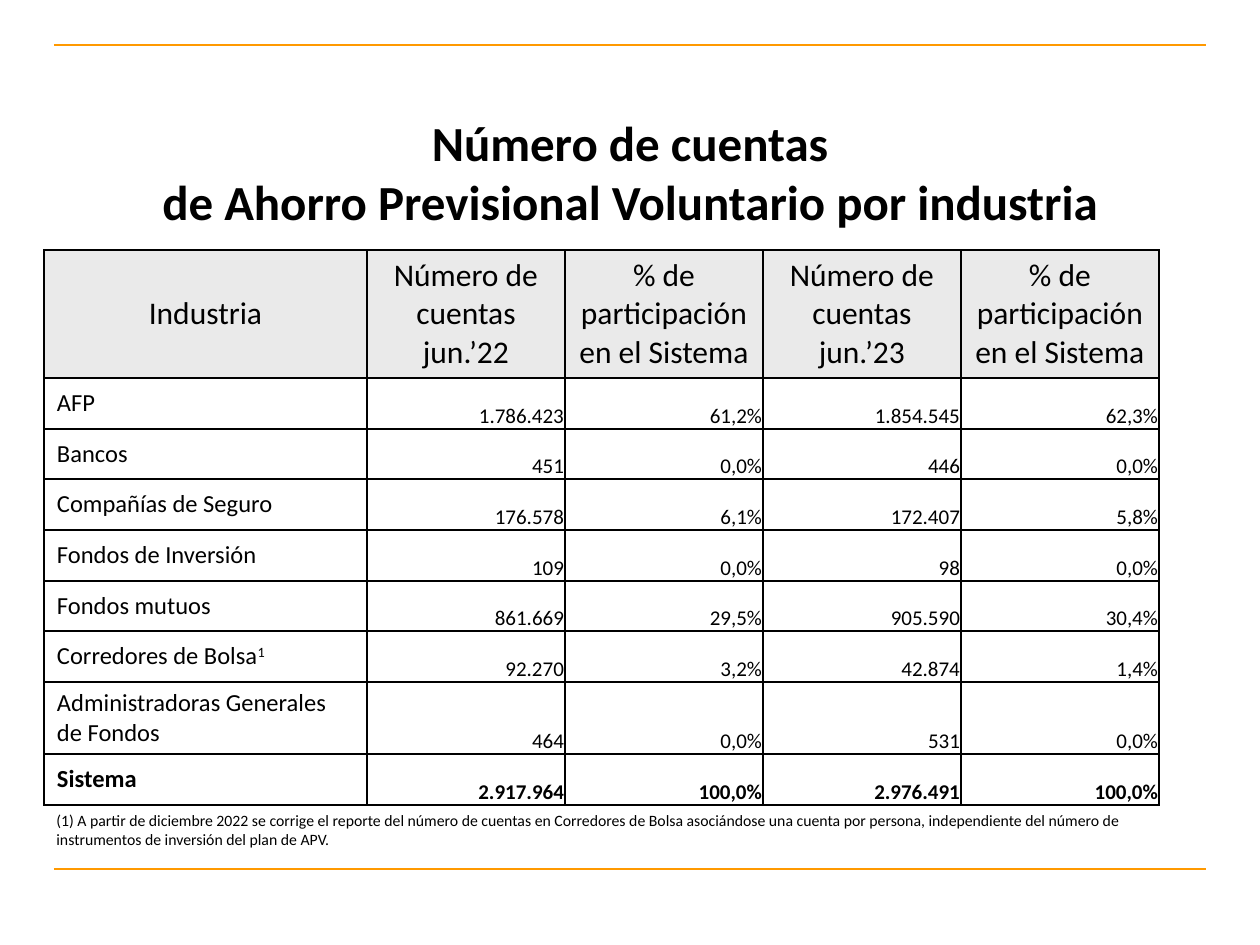
"""Builds the slide on voluntary pension savings accounts by industry."""
from lxml import etree
from pptx import Presentation
from pptx.dml.color import RGBColor
from pptx.enum.shapes import MSO_CONNECTOR
from pptx.enum.text import MSO_ANCHOR, MSO_AUTO_SIZE, PP_ALIGN
from pptx.oxml.ns import qn
from pptx.util import Pt

LEFT, MID, RIGHT = PP_ALIGN.LEFT, PP_ALIGN.CENTER, PP_ALIGN.RIGHT
CENTER, BOTTOM = MSO_ANCHOR.MIDDLE, MSO_ANCHOR.BOTTOM
LINE = MSO_CONNECTOR.STRAIGHT
FIXED, GROW = MSO_AUTO_SIZE.NONE, MSO_AUTO_SIZE.SHAPE_TO_FIT_TEXT

HUES = {"text": "000000", "head": "EAEAEA", "cell": "FFFFFF", "rule": "FF9900"}
TITLE = "Número de cuentas\vde Ahorro Previsional Voluntario por industria"
SHARE = "% de participación en el Sistema"
HEAD = ["Industria", "Número de cuentas\njun.’22", SHARE,
        "Número de cuentas\njun.’23", SHARE]
ROWS = [
    ("AFP", "1.786.423", "61,2%", "1.854.545", "62,3%"),
    ("Bancos", "451", "0,0%", "446", "0,0%"),
    ("Compañías de Seguro", "176.578", "6,1%", "172.407", "5,8%"),
    ("Fondos de Inversión", "109", "0,0%", "98", "0,0%"),
    ("Fondos mutuos", "861.669", "29,5%", "905.590", "30,4%"),
    ("Corredores de Bolsa^1", "92.270", "3,2%", "42.874", "1,4%"),
    ("Administradoras Generales de Fondos", "464", "0,0%", "531", "0,0%"),
    ("Sistema", "2.917.964", "100,0%", "2.976.491", "100,0%"),
]
NOTE = ("(1) A partir de diciembre 2022 se corrige el reporte del número de "
        "cuentas en Corredores de Bolsa asociándose una cuenta por persona, "
        "independiente del número de instrumentos de inversión del plan de APV.")

COLS = [323] + [198] * 4
EDGES = [250, 378, 429, 479, 530, 581, 631, 682, 754, 805]
X, WIDE = 44, sum(COLS)


def px(num):
    return round(num * 914400 / 126)


def box(*nums):
    return [px(num) for num in nums]


def write(frame, text, size=18, bold=False, align=LEFT):
    for at, part in enumerate(text.split("\n")):
        para = frame.add_paragraph() if at else frame.paragraphs[0]
        para.alignment = align
        base, _, sup = part.partition("^")
        para.text = base
        if sup:
            run = para.add_run()
            run.text = sup
            run.font._element.set("baseline", "30000")
        for run in para.runs:
            font = run.font
            font.name, font.size, font.bold = "Calibri", Pt(size), bold
            font.color.rgb = RGBColor.from_string(HUES["text"])


def rule(slide, y):
    line = slide.shapes.add_connector(LINE, *box(54, y, 1206, y))
    line.line.color.rgb = RGBColor.from_string(HUES["rule"])
    line.line.width = Pt(0.75)
    etree.SubElement(line._element.spPr, qn("a:effectLst"))


def style(cell, hue, anchor, pads):
    props = cell._tc.get_or_add_tcPr()
    for side in ("lnL", "lnR", "lnT", "lnB"):
        edge = etree.SubElement(props, qn("a:" + side), w=str(Pt(1)))
        fill = etree.SubElement(edge, qn("a:solidFill"))
        etree.SubElement(fill, qn("a:srgbClr"), val=HUES["text"])
    if hue:
        cell.fill.solid()
        cell.fill.fore_color.rgb = RGBColor.from_string(HUES[hue])
    else:
        cell.fill.background()
    cell.vertical_anchor = anchor
    (cell.margin_left, cell.margin_top,
     cell.margin_right, cell.margin_bottom) = box(*pads)


def grid(slide):
    table = slide.shapes.add_table(
        len(ROWS) + 1, len(COLS),
        *box(X, EDGES[0], WIDE, EDGES[-1] - EDGES[0])).table
    for col, wide in zip(table.columns, COLS):
        col.width = px(wide)
    for row, top, end in zip(table.rows, EDGES, EDGES[1:]):
        row.height = px(end - top)
    for r, row in enumerate([HEAD] + ROWS):
        for c, text in enumerate(row):
            cell = table.cell(r, c)
            if r == 0:
                style(cell, "head", CENTER, (13, 6, 13, 6))
                look = {"size": 18, "align": MID}
            elif c == 0:
                style(cell, "cell", CENTER, (13, 6, 13, 6))
                look = {"size": 14}
            else:
                style(cell, "cell" if c % 2 else None, BOTTOM, (1, 1, 1, 0))
                look = {"size": 12, "align": RIGHT}
            write(cell.text_frame, text, bold=r == len(ROWS), **look)


def main():
    deck = Presentation()
    deck.slide_width, deck.slide_height = box(1260, 945)
    slide = deck.slides.add_slide(deck.slide_layouts[5])
    for y in (45, 869):
        rule(slide, y)

    title = slide.shapes.title
    title.left, title.top, title.width, title.height = box(63, 125, 1134, 128)
    frame = title.text_frame
    frame.auto_size, frame.vertical_anchor = FIXED, CENTER
    frame.margin_top, frame.margin_bottom = box(6, 42)
    write(frame, TITLE, size=28, bold=True, align=MID)

    grid(slide)
    note = slide.shapes.add_textbox(*box(X, 805, WIDE, 50)).text_frame
    note.word_wrap, note.auto_size = True, GROW
    write(note, NOTE, size=9)
    deck.save("out.pptx")


if __name__ == "__main__":
    main()
